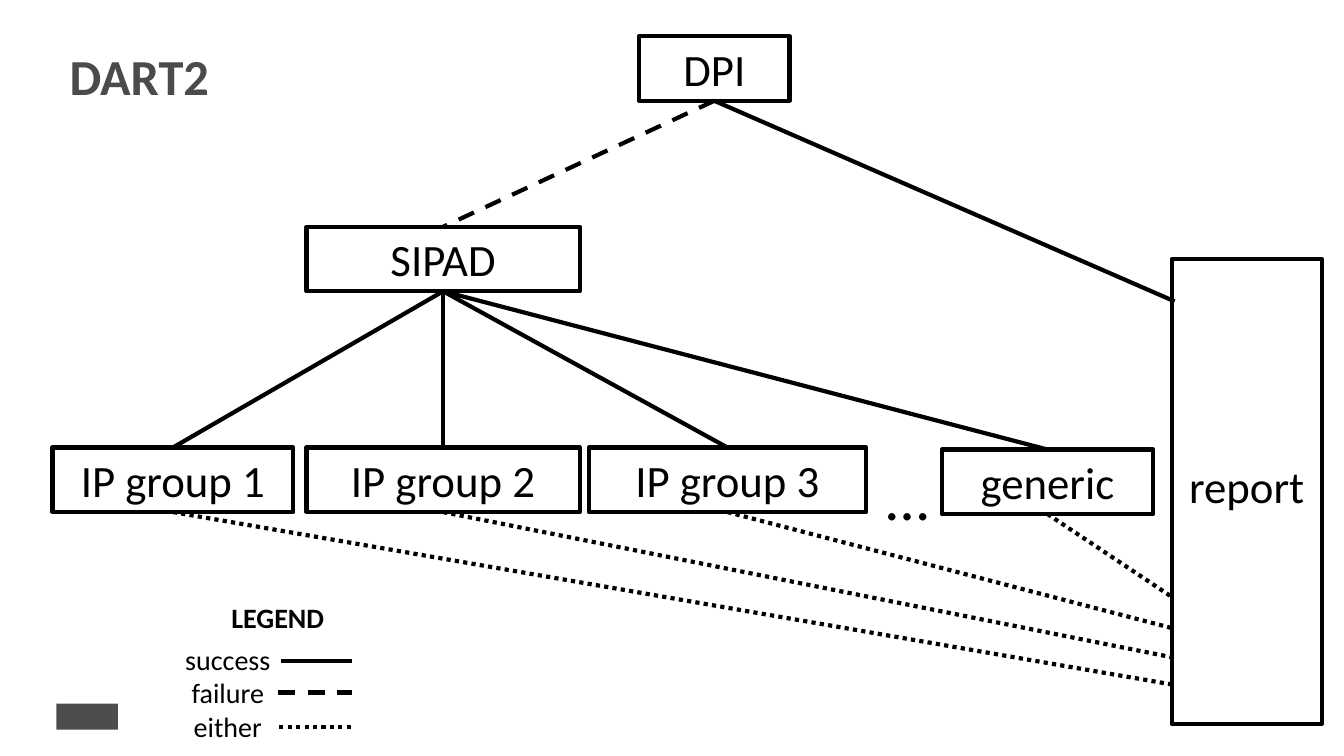
"""Build the DART2 decision-flow slide."""
from dataclasses import dataclass

from lxml.etree import SubElement
from pptx import Presentation
from pptx.dml.color import RGBColor
from pptx.enum.dml import MSO_LINE
from pptx.enum.shapes import MSO_CONNECTOR, MSO_SHAPE
from pptx.enum.text import MSO_ANCHOR as Anchor, MSO_AUTO_SIZE as AutoSize, PP_ALIGN as Align
from pptx.oxml.ns import qn
from pptx.shapes.autoshape import Shape
from pptx.shapes.connector import Connector
from pptx.slide import Slide
from pptx.text.text import TextFrame
from pptx.util import Inches, Pt

TOP, BOTTOM = 0, 2
SUCCESS, FAILURE, EITHER = MSO_LINE.SOLID, MSO_LINE.DASH, MSO_LINE.ROUND_DOT


@dataclass(frozen=True)
class Theme:
    font: str = "Calibri"
    ink: RGBColor = RGBColor(0, 0, 0)
    title_ink: RGBColor = RGBColor(0x49, 0x4B, 0x4D)
    mark: RGBColor = RGBColor(0x4C, 0x4D, 0x4D)
    stroke: float = 3
    legend_size: float = 20
    node_size: float = 32
    title_size: float = 36
    dots_size: float = 44


@dataclass(frozen=True)
class Node:
    label: str
    left: float
    top: float
    width: float
    height: float = 0.64
    bottom_inset: float = 0.05


@dataclass(frozen=True)
class Group:
    node: Node
    report_y: float


@dataclass(frozen=True)
class LegendKey:
    label: str
    start: float
    y: float
    dash: MSO_LINE


THEME = Theme()
REPORT_LEFT = 11.62
LEGEND_RIGHT = 3.49
DPI = Node("DPI", 6.34, 0.36, 1.49)
SIPAD = Node("SIPAD", 3.04, 2.25, 2.71)
REPORT = Node("report", REPORT_LEFT, 2.57, 1.49, 4.61, 0.16)
GROUPS = (
    Group(Node("IP group 1", 0.52, 4.44, 2.39), 6.79),
    Group(Node("IP group 2", 3.04, 4.44, 2.71), 6.52),
    Group(Node("IP group 3", 5.84, 4.44, 2.75), 6.23),
    Group(Node("generic", 9.34, 4.46, 2.1), 5.92),
)
LEGEND = (
    LegendKey("success", 2.79, 6.56, SUCCESS),
    LegendKey("failure", 2.76, 6.87, FAILURE),
    LegendKey("either", 2.77, 7.21, EITHER),
)


def write(frame: TextFrame, text: str, *, size: float, color: RGBColor = THEME.ink,
          bold: bool = False, align: Align = Align.CENTER, anchor: Anchor = Anchor.TOP,
          wrap: bool = True, spacing: float = 1.0) -> None:
    frame.text = text
    frame.word_wrap = wrap
    frame.auto_size = AutoSize.NONE
    frame.vertical_anchor = anchor
    for paragraph in frame.paragraphs:
        paragraph.alignment = align
        paragraph.line_spacing = spacing
        font = paragraph.font
        font.name, font.size, font.bold = THEME.font, Pt(size), bold
        font.color.rgb = color


def draw_node(slide: Slide, node: Node) -> Shape:
    box = slide.shapes.add_shape(MSO_SHAPE.RECTANGLE, Inches(node.left), Inches(node.top),
                                 Inches(node.width), Inches(node.height))
    box.shadow.inherit = False
    box.fill.background()
    box.line.color.rgb = THEME.ink
    box.line.width = Pt(THEME.stroke)
    write(box.text_frame, node.label, size=THEME.node_size, anchor=Anchor.MIDDLE)
    box.text_frame.margin_bottom = Inches(node.bottom_inset)
    return box


def draw_line(slide: Slide, dash: MSO_LINE, *, start: tuple[float, float] = (0, 0),
              end: tuple[float, float] = (0, 0), source: Shape | None = None,
              target: Shape | None = None) -> Connector:
    line = slide.shapes.add_connector(MSO_CONNECTOR.STRAIGHT, *map(Inches, start + end))
    SubElement(line._element.spPr, qn("a:effectLst"))
    line.line.color.rgb = THEME.ink
    line.line.width = Pt(THEME.stroke)
    if dash != SUCCESS:
        line.line.dash_style = dash
    if source is not None:
        line.begin_connect(source, BOTTOM)
    if target is not None:
        line.end_connect(target, TOP)
    return line


def draw_text(slide: Slide, text: str, left: float, top: float, width: float, height: float,
              *, size: float, bold: bool = False, align: Align = Align.CENTER,
              wrap: bool = False) -> None:
    label = slide.shapes.add_textbox(*map(Inches, (left, top, width, height)))
    write(label.text_frame, text, size=size, bold=bold, align=align, wrap=wrap)


def draw_title(slide: Slide) -> None:
    title = slide.shapes.title
    title.left, title.top, title.width, title.height = map(Inches, (0.59, 0.4, 5.01, 0.78))
    write(title.text_frame, "DART2", size=THEME.title_size, color=THEME.title_ink, bold=True,
          align=Align.LEFT, anchor=Anchor.MIDDLE, spacing=0.9)


def draw_flow(slide: Slide) -> None:
    dpi, sipad, _ = (draw_node(slide, node) for node in (DPI, SIPAD, REPORT))
    draw_line(slide, FAILURE, source=dpi, target=sipad)
    draw_line(slide, SUCCESS, end=(11.65, 2.99), source=dpi)
    for group in GROUPS:
        box = draw_node(slide, group.node)
        draw_line(slide, SUCCESS, source=sipad, target=box)
        draw_line(slide, EITHER, end=(REPORT_LEFT, group.report_y), source=box)
    draw_text(slide, "…", 8.69, 4.5, 0.98, 0.84, size=THEME.dots_size,
              align=Align.LEFT, wrap=True)


def draw_legend(slide: Slide) -> None:
    draw_text(slide, "LEGEND", 2.19, 5.91, 1.13, 0.44, size=THEME.legend_size, bold=True)
    draw_text(slide, "\n".join(key.label for key in LEGEND), 1.73, 6.32, 1.06, 1.11,
              size=THEME.legend_size)
    for key in LEGEND:
        draw_line(slide, key.dash, start=(key.start, key.y), end=(LEGEND_RIGHT, key.y))


def draw_mark(slide: Slide) -> None:
    mark = slide.shapes.add_shape(MSO_SHAPE.RECTANGLE,
                                  *map(Inches, (0.56, 6.98, 0.61, 0.26)))
    mark.shadow.inherit = False
    mark.fill.solid()
    mark.fill.fore_color.rgb = THEME.mark
    mark.line.fill.background()


def main() -> None:
    deck = Presentation()
    deck.slide_width, deck.slide_height = Inches(13.33), Inches(7.5)
    slide = deck.slides.add_slide(deck.slide_layouts[5])
    draw_mark(slide)
    draw_flow(slide)
    draw_legend(slide)
    draw_title(slide)
    deck.save("out.pptx")


if __name__ == "__main__":
    main()
